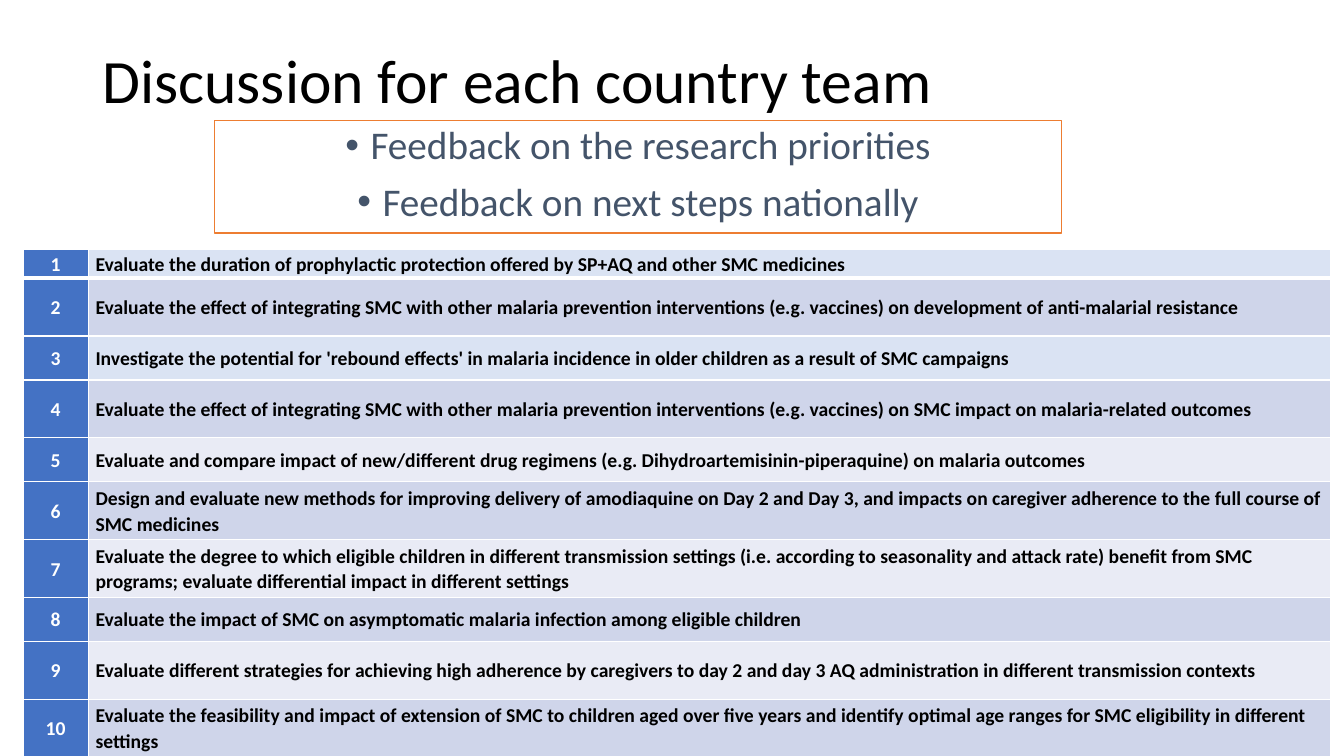
from pptx import Presentation
from pptx.dml.color import RGBColor
from pptx.enum.text import MSO_ANCHOR as Anchor, MSO_AUTO_SIZE as Fit, PP_ALIGN as Align
from pptx.oxml import parse_xml
from pptx.oxml.ns import nsdecls
from pptx.util import Emu, Pt

PX = 9525  # EMU in one px, 96 px to the inch

POINTS = ["Feedback on the research priorities", "Feedback on next steps nationally"]

# Row height, row colour, research priority
LOW, MID, HIGH = 27, 42, 55
SKY, BLUE, PALE = "DAE3F3", "CFD5EA", "E9EBF5"
ROWS = [
    (LOW, SKY, "Evaluate the duration of prophylactic protection offered by SP+AQ and other SMC medicines"),
    (HIGH, BLUE, "Evaluate the effect of integrating SMC with other malaria prevention interventions "
                 "(e.g. vaccines) on development of anti-malarial resistance"),
    (MID, SKY, "Investigate the potential for 'rebound effects' in malaria incidence in older children "
               "as a result of SMC campaigns"),
    (HIGH, BLUE, "Evaluate the effect of integrating SMC with other malaria prevention interventions "
                 "(e.g. vaccines) on SMC impact on malaria-related outcomes"),
    (MID, PALE, "Evaluate and compare impact of new/different drug regimens "
                "(e.g. Dihydroartemisinin-piperaquine) on malaria outcomes"),
    (HIGH, BLUE, "Design and evaluate new methods for improving delivery of amodiaquine on Day 2 and Day 3, "
                 "and impacts on caregiver adherence to the full course of SMC medicines"),
    (HIGH, PALE, "Evaluate the degree to which eligible children in different transmission settings "
                 "(i.e. according to seasonality and attack rate) benefit from SMC programs; "
                 "evaluate differential impact in different settings"),
    (MID, BLUE, "Evaluate the impact of SMC on asymptomatic malaria infection among eligible children"),
    (HIGH, PALE, "Evaluate different strategies for achieving high adherence by caregivers to day 2 and "
                 "day 3 AQ administration in different transmission contexts"),
    (HIGH, BLUE, "Evaluate the feasibility and impact of extension of SMC to children aged over five years "
                 "and identify optimal age ranges for SMC eligibility in different settings"),
]


def px(n):
    return Emu(n * PX)


def color(code):
    return RGBColor.from_string(code)


class Deck:
    face = "Calibri"
    edge = "FFFFFF"

    def __init__(self, wide, high):
        self.prs = Presentation()
        self.prs.slide_width, self.prs.slide_height = px(wide), px(high)
        self.slide = self.prs.slides.add_slide(self.prs.slide_layouts[1])

    def style(self, para, size, ink, align, bold=False, space=0.9):
        font = para.font
        font.name, font.size, font.bold = self.face, Pt(size), bold
        font.color.rgb = color(ink)
        para.alignment, para.line_spacing = align, space

    def place(self, shape, box, anchor):
        shape.left, shape.top, shape.width, shape.height = map(px, box)
        frame = shape.text_frame
        frame.word_wrap, frame.auto_size = True, Fit.NONE
        frame.vertical_anchor = anchor
        return frame

    def title(self, text, box):
        frame = self.place(self.slide.shapes.title, box, Anchor.MIDDLE)
        frame.text = text
        self.style(frame.paragraphs[0], 44, "000000", Align.LEFT)

    def list(self, items, box):
        shape = self.slide.placeholders[1]
        frame = self.place(shape, box, Anchor.TOP)
        shape.fill.solid()
        shape.fill.fore_color.rgb = color("FFFFFF")
        shape.line.color.rgb = color("ED7D31")
        shape.line.width = Pt(1)
        frame.text = "\n".join(items)
        for para in frame.paragraphs:
            self.style(para, 28, "44546A", Align.CENTER)
            para.space_before = Pt(10)
            props = para._p.get_or_add_pPr()
            props.set("marL", str(px(24)))
            props.set("indent", str(px(-24)))
            props.append(parse_xml(f'<a:buChar {nsdecls("a")} char="•"/>'))

    def border(self, cell, top, low):
        props = cell._tc.get_or_add_tcPr()
        for side, width in (("L", 1), ("R", 1), ("T", top), ("B", low)):
            props.append(parse_xml(
                f'<a:ln{side} {nsdecls("a")} w="{Pt(width)}"><a:solidFill>'
                f'<a:srgbClr val="{self.edge}"/></a:solidFill></a:ln{side}>'))

    def cell(self, cell, text, fill, ink, align):
        cell.fill.solid()
        cell.fill.fore_color.rgb = color(fill)
        cell.vertical_anchor = Anchor.MIDDLE
        cell.margin_left = cell.margin_right = px(7)
        cell.margin_top = cell.margin_bottom = 0
        cell.text = text
        para = cell.text_frame.paragraphs[0]
        self.style(para, 14, ink, align, bold=True, space=1.07)
        para.space_after = Pt(8)

    def table(self, rows, left, top, cols):
        high = sum(row[0] for row in rows)
        grid = self.slide.shapes.add_table(
            len(rows), len(cols), px(left), px(top), px(sum(cols)), px(high)).table
        grid.first_row = grid.horz_banding = False
        for col, wide in zip(grid.columns, cols):
            col.width = px(wide)
        for i, (tall, fill, text) in enumerate(rows):
            grid.rows[i].height = px(tall)
            for j in range(len(cols)):
                # A heavy rule parts the first row from the rest
                self.border(grid.cell(i, j), 3 if i == 1 else 1, 3 if i == 0 else 1)
            self.cell(grid.cell(i, 0), str(i + 1), "4472C4", "FFFFFF", Align.CENTER)
            self.cell(grid.cell(i, 1), text, fill, "000000", Align.LEFT)


def main():
    deck = Deck(1280, 720)
    # Heading and feedback list
    deck.title("Discussion for each country team", (88, 10, 1104, 139))
    deck.list(POINTS, (204, 115, 807, 107))
    # Research priorities
    deck.table(ROWS, 22, 238, (62, 1183))
    deck.prs.save("out.pptx")


if __name__ == "__main__":
    main()
